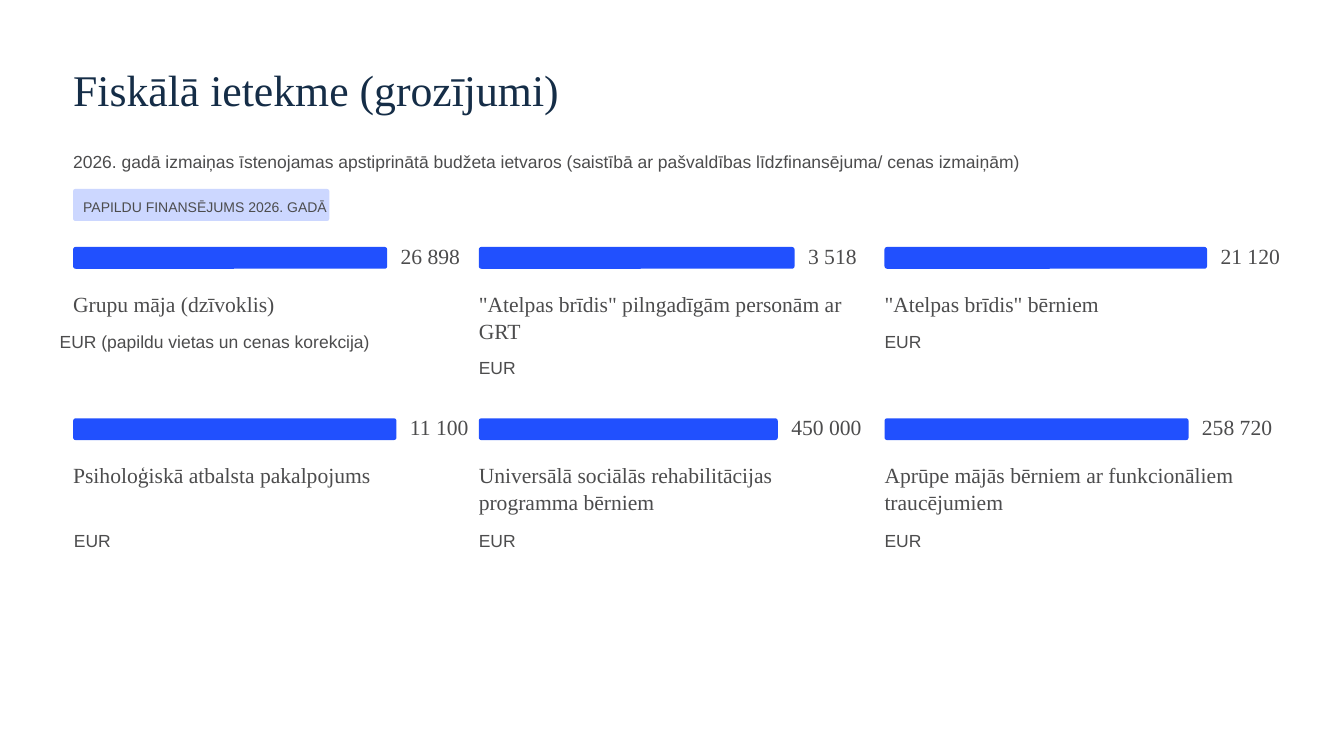
from dataclasses import dataclass

from pptx import Presentation
from pptx.dml.color import RGBColor
from pptx.enum.shapes import MSO_SHAPE
from pptx.enum.text import MSO_ANCHOR, MSO_AUTO_SIZE, PP_ALIGN
from pptx.util import Emu, Pt

PX = 9144
NAVY = RGBColor(0x15, 0x2D, 0x47)
GRAY = RGBColor(0x4C, 0x4C, 0x4D)
BLUE = RGBColor(0x21, 0x50, 0xFE)
PALE_BLUE = RGBColor(0xCC, 0xD7, 0xFF)
WHITE = RGBColor(0xFF, 0xFF, 0xFF)
SERIF = "Times New Roman"
SANS = "Arial"

LEFT, TOP = 87, 294
COLUMN_STEP, ROW_STEP = 483, 204
COLUMN_WIDTH, BAR_HEIGHT, BAR_GAP = 461, 26, 16


@dataclass
class Item:
    """One funding item with its bar, amount, label and unit."""
    amount: str
    bar_width: int
    label: str
    unit_top: int
    unit: str = "EUR"
    unit_shift: int = 0


ITEMS = [
    Item("26 898", 374, "Grupu māja (dzīvoklis)", 95,
         "EUR (papildu vietas un cenas korekcija)", -16),
    Item("3 518", 376, "\"Atelpas brīdis\" pilngadīgām personām ar GRT", 126),
    Item("21 120", 384, "\"Atelpas brīdis\" bērniem", 94),
    Item("11 100", 385, "Psiholoģiskā atbalsta pakalpojums", 127, unit_shift=1),
    Item("450 000", 356, "Universālā sociālās rehabilitācijas programma bērniem", 127),
    Item("258 720", 362, "Aprūpe mājās bērniem ar funkcionāliem traucējumiem", 127),
]


def px(*lengths):
    """Turn pixel lengths into EMU."""
    return [Emu(length * PX) for length in lengths]


def format_text(shape, text, font_name, size, spacing, color=GRAY, wrap=False):
    """Fill a shape with one left-aligned paragraph without insets."""
    frame = shape.text_frame
    frame.text = text
    frame.word_wrap = wrap
    frame.auto_size = MSO_AUTO_SIZE.NONE
    frame.vertical_anchor = MSO_ANCHOR.TOP
    frame.margin_left = frame.margin_top = frame.margin_right = frame.margin_bottom = 0
    paragraph = frame.paragraphs[0]
    paragraph.alignment = PP_ALIGN.LEFT
    paragraph.line_spacing = Pt(spacing)
    paragraph.space_before = Pt(0)
    font = paragraph.runs[0].font
    font.name, font.size = font_name, Pt(size)
    font.color.rgb = color


def add_title(slide, text):
    """Place and format the title placeholder."""
    title = slide.shapes.title
    title.left, title.top, title.width, title.height = px(LEFT, 72, 694, 66)
    format_text(title, text, SERIF, 37.5, 47, NAVY)


def add_text(slide, box, text, font_name, size, spacing, wrap=False):
    """Add a text box."""
    shape = slide.shapes.add_textbox(*px(*box))
    format_text(shape, text, font_name, size, spacing, wrap=wrap)


def add_bar(slide, box, color, rounding):
    """Add a plain rounded rectangle."""
    shape = slide.shapes.add_shape(MSO_SHAPE.ROUNDED_RECTANGLE, *px(*box))
    shape.adjustments[0] = rounding
    shape.shadow.inherit = False
    shape.fill.solid()
    shape.fill.fore_color.rgb = color
    shape.line.fill.background()


def add_item(slide, left, top, item):
    """Add the bar, amount, label and unit of an item."""
    add_bar(slide, (left, top, item.bar_width, BAR_HEIGHT), BLUE, 0.12)
    offset = item.bar_width + BAR_GAP
    add_text(slide, (left + offset, top, COLUMN_WIDTH - offset, BAR_HEIGHT),
             item.amount, SERIF, 18.5, 18.5)
    add_text(slide, (left, top + 50, COLUMN_WIDTH, 66),
             item.label, SERIF, 18.5, 23.5, wrap=True)
    add_text(slide, (left + item.unit_shift, top + item.unit_top, COLUMN_WIDTH, 31),
             item.unit, SANS, 15, 22)


def main():
    """Build the slide and save it."""
    presentation = Presentation()
    presentation.slide_width, presentation.slide_height = px(1600, 900)
    slide = presentation.slides.add_slide(presentation.slide_layouts[5])
    slide.background.fill.solid()
    slide.background.fill.fore_color.rgb = WHITE

    add_title(slide, "Fiskālā ietekme (grozījumi)")
    add_text(slide, (LEFT, 174, 1426, 31),
             "2026. gadā izmaiņas īstenojamas apstiprinātā budžeta ietvaros "
             "(saistībā ar pašvaldības līdzfinansējuma/ cenas izmaiņām)",
             SANS, 15, 22)
    add_bar(slide, (LEFT, 225, 305, 38), PALE_BLUE, 0.07)
    add_text(slide, (99, 232, 280, 25), "PAPILDU FINANSĒJUMS 2026. GADĀ", SANS, 12, 17.5)

    for index, item in enumerate(ITEMS):
        row, column = divmod(index, 3)
        add_item(slide, LEFT + column * COLUMN_STEP, TOP + row * ROW_STEP, item)

    presentation.save("out.pptx")


if __name__ == "__main__":
    main()
